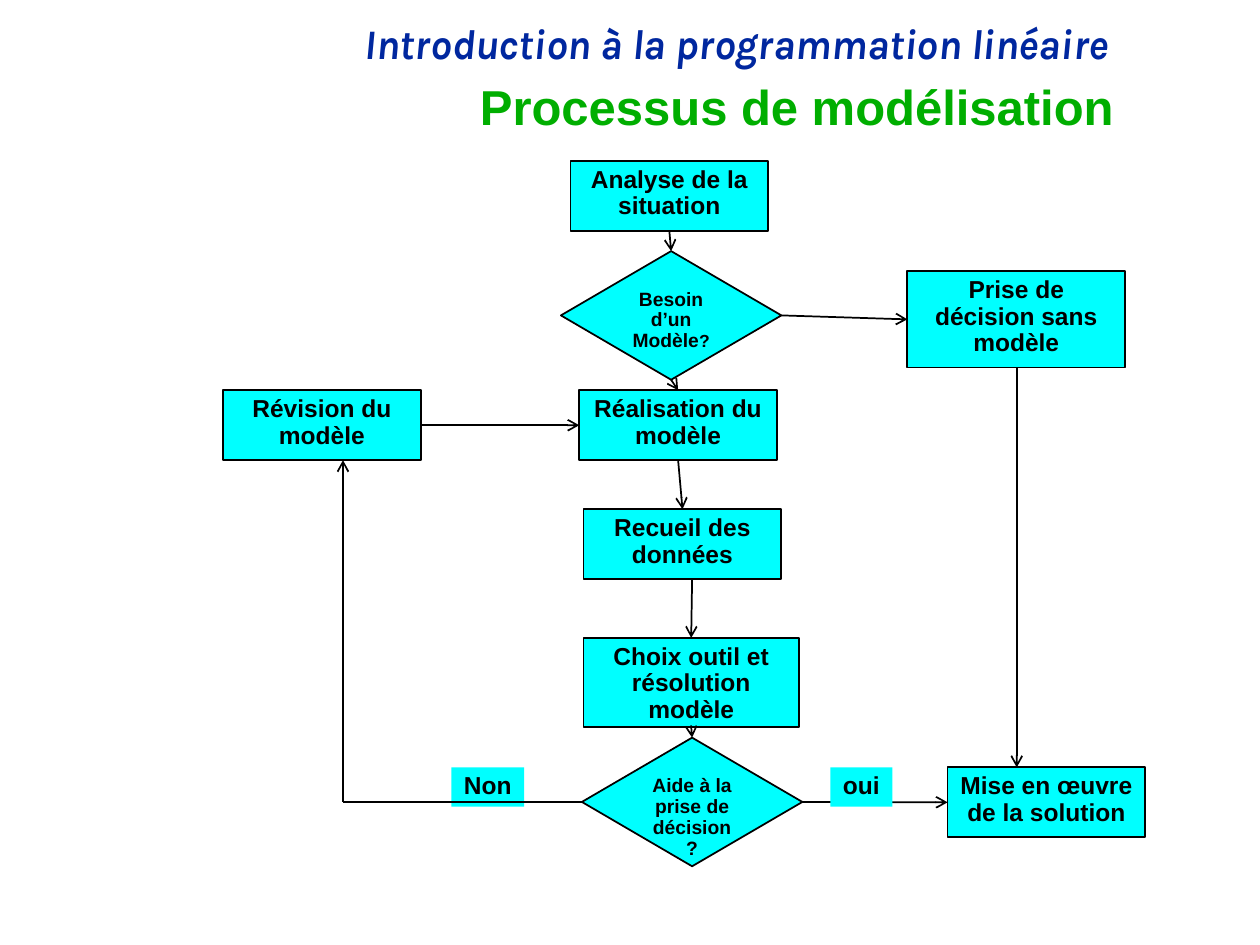
from dataclasses import dataclass

from lxml import etree
from pptx import Presentation
from pptx.dml.color import RGBColor
from pptx.enum.shapes import MSO_CONNECTOR, MSO_SHAPE
from pptx.enum.text import MSO_ANCHOR, MSO_AUTO_SIZE, PP_ALIGN
from pptx.oxml.ns import qn
from pptx.util import Pt

STRAIGHT = MSO_CONNECTOR.STRAIGHT
RECT, DECISION = MSO_SHAPE.RECTANGLE, MSO_SHAPE.FLOWCHART_DECISION
TOP, MIDDLE = MSO_ANCHOR.TOP, MSO_ANCHOR.MIDDLE
LEFT, CENTER, RIGHT = PP_ALIGN.LEFT, PP_ALIGN.CENTER, PP_ALIGN.RIGHT
NO_FIT = MSO_AUTO_SIZE.NONE
SITE_TOP, SITE_LEFT, SITE_BOTTOM, SITE_RIGHT = range(4)


@dataclass(frozen=True)
class Theme:
    """Colours, fonts and type sizes of the slide."""
    course: RGBColor = RGBColor(0x00, 0x27, 0x9F)
    title: RGBColor = RGBColor(0x00, 0xAE, 0x00)
    fill: RGBColor = RGBColor(0x00, 0xFF, 0xFF)
    ink: RGBColor = RGBColor(0x00, 0x00, 0x00)
    course_font: str = "Karla"
    font: str = "Arial"
    course_size: float = 24
    title_size: float = 28
    step_size: float = 14
    decision_size: float = 11
    mark_size: float = 10
    line: float = 1
    spacing: float = 0.9


THEME = Theme()

STEPS = {
    "analyse": ("Analyse de la situation", 198.5, 0, 113, 40),
    "sans_modele": ("Prise de décision sans modèle", 391, 63, 124.5, 55),
    "realisation": ("Réalisation du modèle", 203.5, 131, 113, 40),
    "recueil": ("Recueil des données", 206, 199, 113, 40),
    "choix": ("Choix outil et résolution modèle", 206, 272.5, 123, 51),
    "mise_en_oeuvre": ("Mise en œuvre de la solution", 414, 346.5, 113, 40),
    "revision": ("Révision du modèle", 0, 131, 113, 40),
}
DECISIONS = {
    "besoin": ("Besoin d’un Modèle", 193, 51.5, 126, 73.5),
    "aide": ("Aide à la prise de décision?", 205, 329.5, 126, 73.5),
}
LABELS = [("oui", 347, 346.5, 35.5, 22.5), ("Non", 130.5, 346.5, 41.5, 22.5)]
LINKS = [
    ("analyse", SITE_BOTTOM, "besoin", SITE_TOP),
    ("besoin", SITE_BOTTOM, "realisation", SITE_TOP),
    ("realisation", SITE_BOTTOM, "recueil", SITE_TOP),
    ("choix", SITE_BOTTOM, "aide", SITE_TOP),
    ("revision", SITE_RIGHT, "realisation", SITE_LEFT),
    ("besoin", SITE_RIGHT, "sans_modele", SITE_LEFT),
]
FREE_LINES = [
    (205, 366.25, 68.5, 366.25, False),
    (68.5, 366.25, 68.5, 171, True),
    (268, 239, 267.5, 272.5, True),
    (453.5, 118, 453.5, 346.5, True),
]


def set_text(sp, text, size, color, align=CENTER, anchor=TOP, font=THEME.font):
    """Write one bold paragraph into a shape and return it."""
    tf = sp.text_frame
    tf.word_wrap = True
    tf.auto_size = NO_FIT
    tf.vertical_anchor = anchor
    tf.margin_left = tf.margin_right = Pt(7.2)
    tf.margin_top = tf.margin_bottom = Pt(3.6)
    p = tf.paragraphs[0]
    p.add_run().text = text
    p.alignment = align
    p.line_spacing = THEME.spacing
    p.font.name, p.font.size = font, Pt(size)
    p.font.bold = True
    p.font.color.rgb = color
    return p


def add_box(slide, kind, text, x, y, w, h, size=THEME.step_size, outlined=True):
    """Add a filled flowchart box with its text."""
    sp = slide.shapes.add_shape(kind, Pt(x), Pt(y), Pt(w), Pt(h))
    sp.shadow.inherit = False
    sp.fill.solid()
    sp.fill.fore_color.rgb = THEME.fill
    if outlined:
        sp.line.color.rgb = THEME.ink
        sp.line.width = Pt(THEME.line)
    else:
        sp.line.fill.background()
    set_text(sp, text, size, THEME.ink)
    return sp


def add_line(slide, x1=0, y1=0, x2=0, y2=0, arrow=True):
    """Add a straight line, with an arrowhead at its end if wanted."""
    cx = slide.shapes.add_connector(STRAIGHT, Pt(x1), Pt(y1), Pt(x2), Pt(y2))
    cx.line.color.rgb = THEME.ink
    cx.line.width = Pt(THEME.line)
    if arrow:
        ln = cx.line._get_or_add_ln()
        etree.SubElement(ln, qn("a:tailEnd"), type="arrow")
    etree.SubElement(cx._element.spPr, qn("a:effectLst"))
    return cx


def link(slide, start, start_site, end, end_site):
    """Join two boxes with a glued arrow."""
    cx = add_line(slide)
    cx.begin_connect(start, start_site)
    cx.end_connect(end, end_site)


def add_heading(slide, x, y, w, h):
    """Place the course name and the slide title."""
    course = slide.shapes.add_textbox(Pt(x + 128), Pt(y), Pt(w + 12), Pt(33))
    p = set_text(course, "Introduction à la programmation linéaire",
                 THEME.course_size, THEME.course, LEFT, font=THEME.course_font)
    p.font.italic = True
    title = slide.shapes.title
    title.left, title.top = Pt(x), Pt(y + h - 36)
    title.width, title.height = Pt(w), Pt(36)
    set_text(title, "Processus de modélisation",
             THEME.title_size, THEME.title, RIGHT, MIDDLE)


def add_flowchart(slide, x, y):
    """Draw the modelling process from the given top left corner."""
    boxes = {}
    for name, (text, dx, dy, w, h) in STEPS.items():
        boxes[name] = add_box(slide, RECT, text, x + dx, y + dy, w, h)
    for name, (text, dx, dy, w, h) in DECISIONS.items():
        boxes[name] = add_box(slide, DECISION, text, x + dx, y + dy, w, h,
                              THEME.decision_size)
    mark = boxes["besoin"].text_frame.paragraphs[0].add_run()
    mark.text = "?"
    mark.font.size = Pt(THEME.mark_size)
    link(slide, boxes["aide"], SITE_RIGHT, boxes["mise_en_oeuvre"], SITE_LEFT)
    for text, dx, dy, w, h in LABELS:
        sp = add_box(slide, RECT, text, x + dx, y + dy, w, h, outlined=False)
        sp.text_frame.word_wrap = False
    for x1, y1, x2, y2, arrow in FREE_LINES:
        add_line(slide, x + x1, y + y1, x + x2, y + y2, arrow)
    for start, start_site, end, end_site in LINKS:
        link(slide, boxes[start], start_site, boxes[end], end_site)


def main():
    """Build and save the slide."""
    prs = Presentation()
    prs.slide_width, prs.slide_height = Pt(720), Pt(540)
    slide = prs.slides.add_slide(prs.slide_layouts[5])
    add_heading(slide, 73.5, 9.5, 570, 71)
    add_flowchart(slide, 127.5, 92)
    prs.save("out.pptx")


if __name__ == "__main__":
    main()
